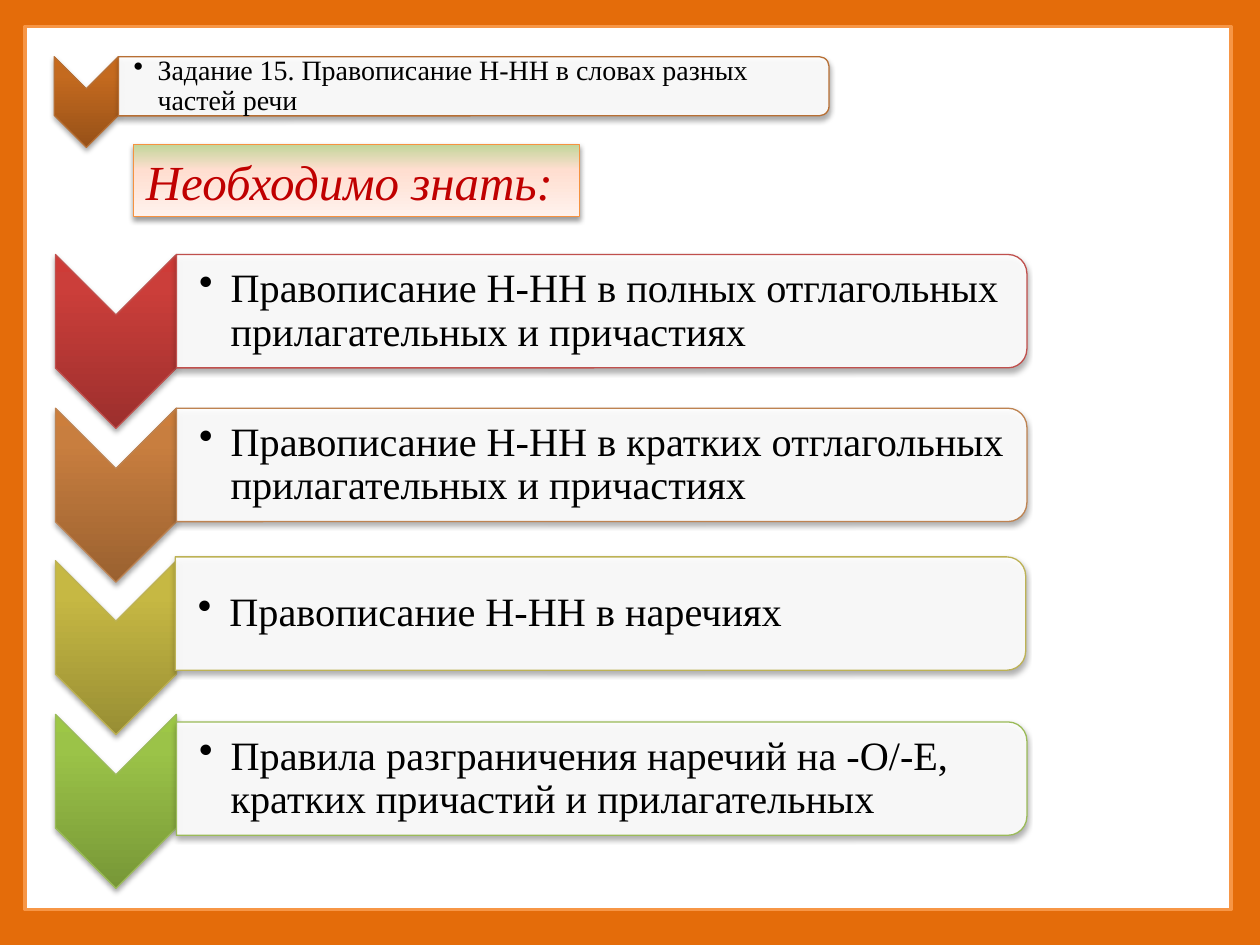
from dataclasses import dataclass

from lxml import etree
from pptx import Presentation
from pptx.dml.color import RGBColor
from pptx.enum.shapes import MSO_SHAPE
from pptx.enum.text import MSO_ANCHOR
from pptx.oxml.ns import qn
from pptx.util import Inches, Pt

RECTANGLE = MSO_SHAPE.RECTANGLE
CHEVRON = MSO_SHAPE.CHEVRON
ROUNDED_END = MSO_SHAPE.ROUND_2_SAME_RECTANGLE
MIDDLE = MSO_ANCHOR.MIDDLE

FONT = "Times New Roman"
COLORS = {
    "background": "E46C0A",
    "frame": "F79646",
    "white": "FFFFFF",
    "black": "000000",
    "heading": "C00000",
    "heading_line": "F69240",
}
HEADING_STOPS = ((0, "C3D69B"), (35, "FFDED0"), (100, "FFF2ED"))


@dataclass(frozen=True)
class RowStyle:
    """Measures shared by rows of one size, in inches and points."""
    chevron_left: float
    chevron_width: float
    chevron_height: float
    panel_width: float
    panel_height: float
    text_width: float
    text_height: float
    inset: float
    margin: float
    indent: float
    font_size: float


@dataclass(frozen=True)
class Row:
    text: str
    chevron_top: float
    panel_left: float
    panel_top: float
    line: str
    shades: tuple[str, str, str]


TASK_STYLE = RowStyle(0.43, 0.51, 0.72, 5.64, 0.47, 5.61, 0.42, 0.12, 0.01, 0.19, 16)
RULE_STYLE = RowStyle(0.44, 0.96, 1.38, 6.75, 0.9, 6.71, 0.81, 0.18, 0.02, 0.25, 23)

TASK = Row("Задание 15. Правописание Н-НН в словах разных частей речи",
           0.45, 0.94, 0.45, "B76F34", ("975118", "C46A1F", "C86A1C"))
RULES = (
    Row("Правописание Н-НН в полных отглагольных прилагательных и причастиях",
        2.02, 1.4, 2.02, "C0504D", ("9C2F2D", "CB3E3A", "CE3B37")),
    Row("Правописание Н-НН в кратких отглагольных прилагательных и причастиях",
        3.24, 1.4, 3.24, "BE8351", ("9A6130", "C87E3F", "CC7E3C")),
    Row("Правописание Н-НН в наречиях",
        4.45, 1.39, 4.42, "BDB255", ("988E34", "C6B843", "C9BB41")),
    Row("Правила разграничения наречий на -О/-Е, кратких причастий и прилагательных",
        5.67, 1.4, 5.73, "9BBB59", ("779737", "9BC348", "9DC746")),
)


def rgb(color: str) -> RGBColor:
    return RGBColor.from_string(color)


def add_outlined(slide, kind, left: float, top: float, width: float, height: float,
                 line: str, weight: float = 0.75):
    shape = slide.shapes.add_shape(kind, Inches(left), Inches(top), Inches(width), Inches(height))
    shape.shadow.inherit = False
    shape.line.color.rgb = rgb(line)
    shape.line.width = Pt(weight)
    return shape


def add_turned(slide, kind, left: float, top: float, width: float, height: float, line: str):
    """Add a shape turned by 90° that covers the given box once turned."""
    shift = (width - height) / 2
    shape = add_outlined(slide, kind, left + shift, top - shift, height, width, line)
    shape.rotation = 90
    return shape


def add_color(parent, color: str, alpha: int | None = None) -> None:
    node = etree.SubElement(parent, qn("a:srgbClr"), val=color)
    if alpha is not None:
        etree.SubElement(node, qn("a:alpha"), val=str(alpha * 1000))


def cast_shadow(shape, alpha: int, distance: float) -> None:
    effects = shape._element.spPr.find(qn("a:effectLst"))
    shadow = etree.SubElement(effects, qn("a:outerShdw"), blurRad=str(Pt(3.1)),
                              dist=str(Pt(distance)), dir="5400000", rotWithShape="0")
    add_color(shadow, COLORS["black"], alpha)


def fill_gradient(shape, stops, angle: float) -> None:
    """Fill with (percent, colour) stops; the angle runs counter-clockwise on the slide."""
    shape.fill.gradient()
    shape.fill.gradient_angle = angle
    gradient = shape._element.spPr.find(qn("a:gradFill"))
    gradient.set("rotWithShape", "0")
    stop_list = gradient.find(qn("a:gsLst"))
    for old_stop in list(stop_list):
        stop_list.remove(old_stop)
    for percent, color in stops:
        stop = etree.SubElement(stop_list, qn("a:gs"), pos=str(percent * 1000))
        add_color(stop, color)


def style_text(paragraph, size: float, color: str) -> None:
    paragraph.font.name = FONT
    paragraph.font.size = Pt(size)
    paragraph.font.color.rgb = rgb(color)


def add_bullet(paragraph, indent: float) -> None:
    properties = paragraph._p.get_or_add_pPr()
    properties.set("marL", str(Inches(indent)))
    properties.set("indent", str(-Inches(indent)))
    bullet = etree.Element(qn("a:buChar"), char="•")
    properties.find(qn("a:defRPr")).addprevious(bullet)


def add_row(slide, row: Row, style: RowStyle) -> None:
    chevron = add_turned(slide, CHEVRON, style.chevron_left, row.chevron_top,
                         style.chevron_width, style.chevron_height, row.line)
    fill_gradient(chevron, zip((0, 80, 100), row.shades), 90)
    cast_shadow(chevron, 35, 1.8)

    panel = add_turned(slide, ROUNDED_END, row.panel_left, row.panel_top,
                       style.panel_width, style.panel_height, row.line)
    panel.fill.solid()
    panel.fill.fore_color.rgb = rgb(COLORS["white"])
    white = panel._element.spPr.find(qn("a:solidFill")).find(qn("a:srgbClr"))
    etree.SubElement(white, qn("a:alpha"), val="90000")
    cast_shadow(panel, 35, 1.8)

    text_top = row.panel_top + (style.panel_height - style.text_height) / 2
    label = slide.shapes.add_textbox(Inches(row.panel_left), Inches(text_top),
                                     Inches(style.text_width), Inches(style.text_height))
    frame = label.text_frame
    frame.word_wrap = True
    frame.vertical_anchor = MIDDLE
    frame.margin_left = Inches(style.inset)
    frame.margin_top = frame.margin_right = frame.margin_bottom = Inches(style.margin)
    paragraph = frame.paragraphs[0]
    paragraph.text = row.text
    paragraph.line_spacing = 0.9
    style_text(paragraph, style.font_size, COLORS["black"])
    add_bullet(paragraph, style.indent)


def add_heading(slide) -> None:
    heading = add_outlined(slide, RECTANGLE, 1.06, 1.15, 3.54, 0.57, COLORS["heading_line"])
    fill_gradient(heading, HEADING_STOPS, 270)
    cast_shadow(heading, 38, 1.6)
    heading.text_frame.word_wrap = True
    paragraph = heading.text_frame.paragraphs[0]
    paragraph.text = "Необходимо знать:"
    paragraph.alignment = 1
    style_text(paragraph, 28, COLORS["heading"])
    paragraph.font.italic = True


def main() -> None:
    deck = Presentation()
    deck.slide_width, deck.slide_height = Inches(10), Inches(7.5)
    slide = deck.slides.add_slide(deck.slide_layouts[6])
    slide.background.fill.solid()
    slide.background.fill.fore_color.rgb = rgb(COLORS["background"])

    page = add_outlined(slide, RECTANGLE, 0.2, 0.21, 9.57, 7.01, COLORS["frame"], 2)
    page.fill.solid()
    page.fill.fore_color.rgb = rgb(COLORS["white"])

    add_row(slide, TASK, TASK_STYLE)
    add_heading(slide)
    for rule in RULES:
        add_row(slide, rule, RULE_STYLE)
    deck.save("out.pptx")


if __name__ == "__main__":
    main()
